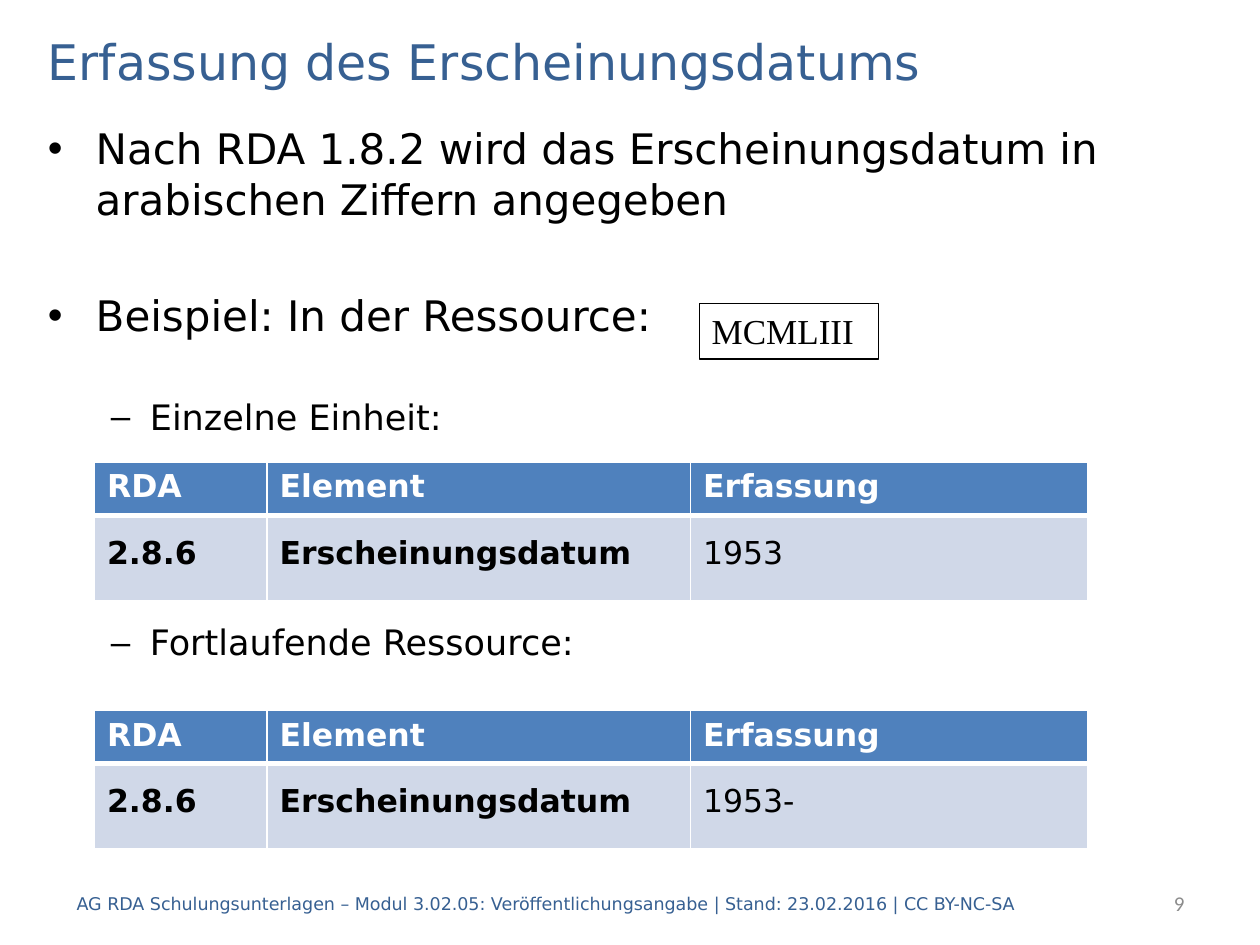
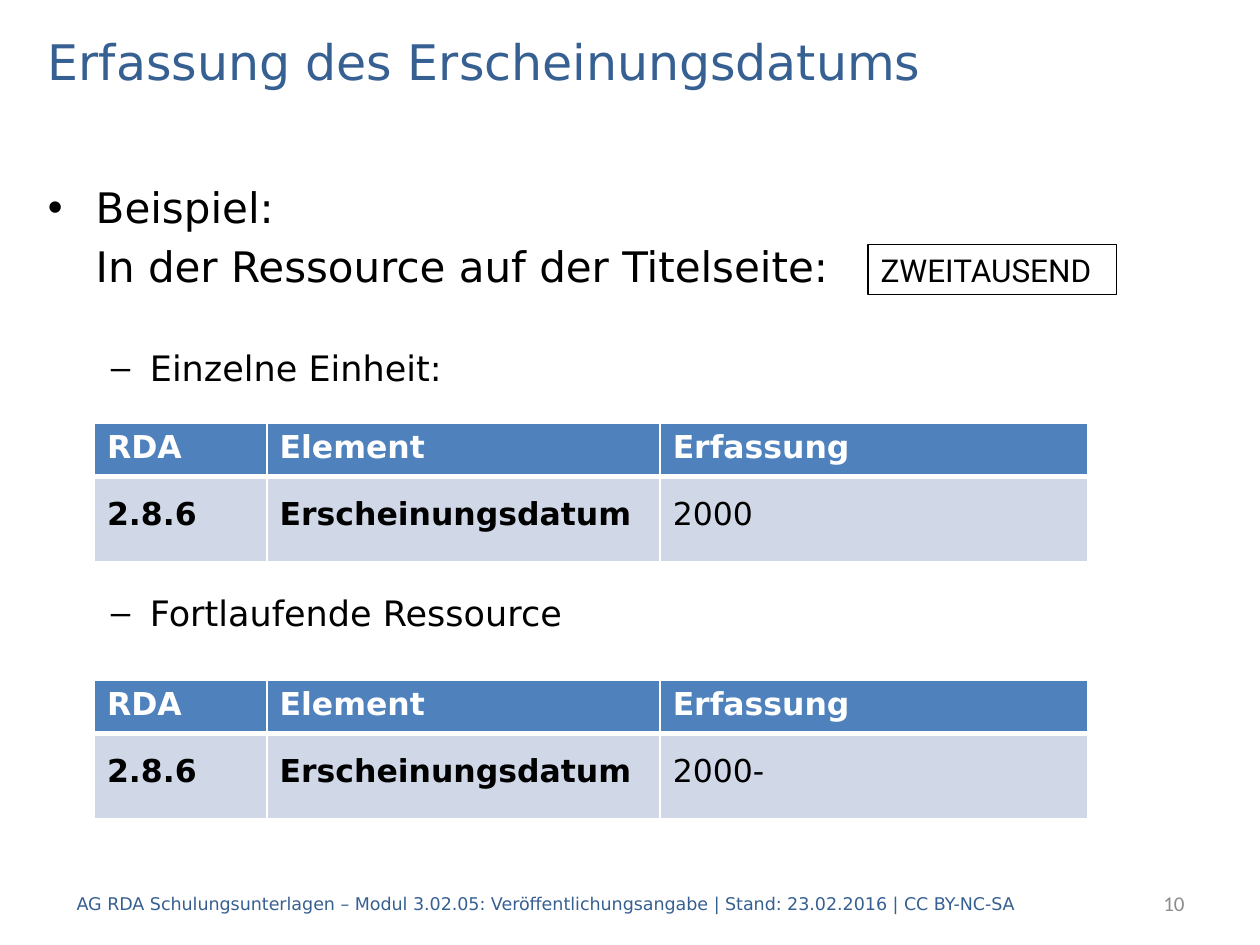
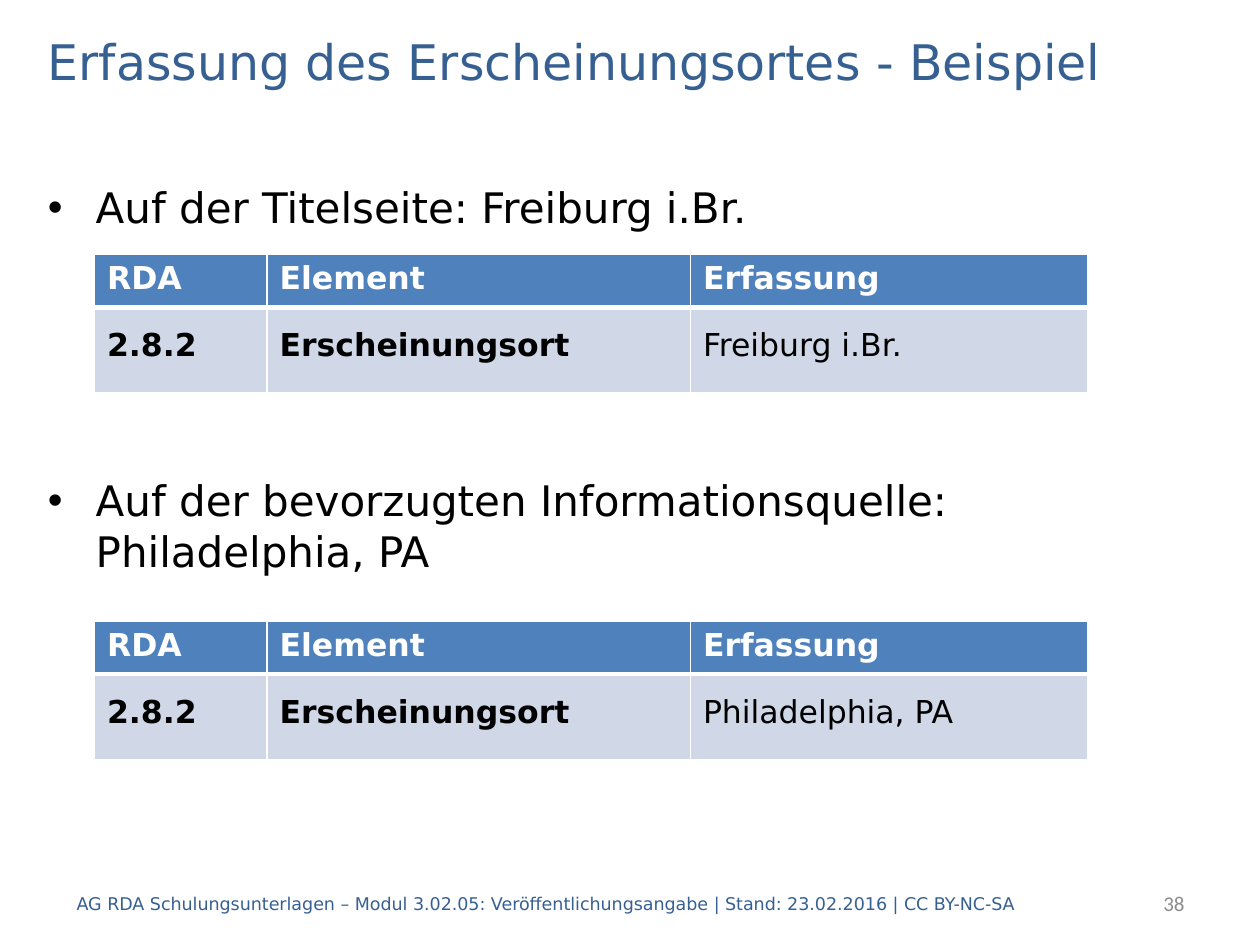
import pptx
import pptx.dml.color
import pptx.enum.shapes
import pptx.enum.text
import pptx.oxml
import pptx.oxml.ns
import pptx.util

Pt = pptx.util.Pt
Inches = pptx.util.Inches
ALIGN = pptx.enum.text.PP_ALIGN
ANCHOR = pptx.enum.text.MSO_ANCHOR
FIT = pptx.enum.text.MSO_AUTO_SIZE
NS = pptx.oxml.ns.nsdecls("a")

SANS = "DejaVu Sans"
FOOTER = ("AG RDA Schulungsunterlagen – Modul 3.02.05: Veröffentlichungsangabe"
          " | Stand: 23.02.2016 | CC BY-NC-SA")
HEADS = ("RDA", "Element", "Erfassung")
WIDE = (5.48, 13.44, 12.6)
NARROW = (5.48, 12.48, 13.56)
LEVELS = {
    "bullet": dict(level=0, char="•", left=0.38, first=-0.38, size=24, line=29),
    "plain": dict(level=0, char=None, left=0.38, first=0, size=24, line=29),
    "dash": dict(level=1, char="–", left=0.81, first=-0.31, size=20, line=24),
}


def rgb(value):
    return pptx.dml.color.RGBColor.from_string(value)


def style_with(obj, values):
    for name, value in values.items():
        setattr(obj, name, value)


class Deck:
    """Slides on a grid of 40 columns and 30 rows with one shared style."""

    title_color, text_color, number_color = "376092", "000000", "8C8C8C"
    head_fill, body_fill, white = "4F81BD", "D0D8E8", "FFFFFF"

    def __init__(self):
        self.prs = pptx.Presentation()
        style_with(self.prs, dict(slide_width=Inches(10), slide_height=Inches(7.5)))
        self.col = self.prs.slide_width / 40
        self.row = self.prs.slide_height / 30

    def area(self, x, y, w, h):
        return (round(x * self.col), round(y * self.row),
                round(w * self.col), round(h * self.row))

    def place(self, sp, *at):
        style_with(sp, dict(zip(("left", "top", "width", "height"), self.area(*at))))

    def frame(self, sp, anchor, fit=FIT.NONE):
        tf = sp.text_frame
        style_with(tf, dict(word_wrap=True, auto_size=fit, vertical_anchor=anchor))
        return tf

    def add_text(self, p, text, size, color, font=SANS, bold=False, **layout):
        style_with(p, {"alignment": ALIGN.LEFT, **layout})
        r = p.add_run()
        r.text = text
        style_with(r.font, dict(size=Pt(size), name=font, bold=bold))
        r.font.color.rgb = rgb(color)

    def slide(self, title, number):
        self.s = self.prs.slides.add_slide(self.prs.slide_layouts[1])
        sp = self.s.shapes.title
        self.place(sp, 1.12, 0.8, 37.8, 2.24)
        p = self.frame(sp, ANCHOR.MIDDLE).paragraphs[0]
        self.add_text(p, title, 28, self.title_color)
        self.label(FOOTER, 2.04, 33.08, 10, self.title_color)
        self.label(number, 31.64, 6.36, 12, self.number_color,
                   font="Calibri", alignment=ALIGN.RIGHT)

    def label(self, text, x, w, size, color, **style):
        sp = self.s.shapes.add_textbox(*self.area(x, 27.88, w, 1.6))
        p = self.frame(sp, ANCHOR.MIDDLE).paragraphs[0]
        self.add_text(p, text, size, color, **style)

    def body(self, items, inset=0.05):
        sp = self.s.placeholders[1]
        self.place(sp, 1.12, 3.68, 37.8, 23.92)
        tf = self.frame(sp, ANCHOR.TOP)
        tf.margin_top = Inches(inset)
        for i, (kind, text, before) in enumerate(items):
            p = tf.add_paragraph() if i else tf.paragraphs[0]
            style = LEVELS[kind]
            self.add_text(p, text, style["size"], self.text_color,
                          level=style["level"], space_before=Pt(before),
                          line_spacing=Pt(style["line"]))
            self.bullet(p, style)

    def bullet(self, p, style):
        pPr = p._p.get_or_add_pPr()
        pPr.set("marL", str(Inches(style["left"])))
        pPr.set("indent", str(Inches(style["first"])))
        tags = [f"<a:buNone {NS}/>"]
        if style["char"]:
            tags = [f'<a:buFont {NS} typeface="Arial"/>',
                    f'<a:buChar {NS} char="{style["char"]}"/>']
        for tag in tags:
            pPr.append(pptx.oxml.parse_xml(tag))

    def table(self, y, values, widths=WIDE):
        heights = (1.68, 2.72)
        at = self.area(3, y, sum(widths), sum(heights))
        tbl = self.s.shapes.add_table(2, len(widths), *at).table
        for column, w in zip(tbl.columns, widths):
            column.width = round(w * self.col)
        for row, h in zip(tbl.rows, heights):
            row.height = round(h * self.row)
        para = dict(line_spacing=Pt(16), space_before=Pt(6), space_after=Pt(6))
        for c, (head, value) in enumerate(zip(HEADS, values)):
            self.cell(tbl.cell(0, c), head, self.head_fill, 3,
                      ANCHOR.TOP, color=self.white, bold=True)
            self.cell(tbl.cell(1, c), value, self.body_fill, 1,
                      ANCHOR.MIDDLE, color=self.text_color, bold=c < 2, **para)

    def cell(self, cell, text, fill, bottom, anchor, **style):
        tcPr = cell._tc.get_or_add_tcPr()
        for side, width in dict(L=1, R=1, T=1, B=bottom).items():
            tcPr.append(pptx.oxml.parse_xml(
                f'<a:ln{side} {NS} w="{Pt(width)}"><a:solidFill>'
                f'<a:srgbClr val="{self.white}"/></a:solidFill></a:ln{side}>'))
        cell.fill.solid()
        cell.fill.fore_color.rgb = rgb(fill)
        cell.vertical_anchor = anchor
        self.add_text(cell.text_frame.paragraphs[0], text, 18, **style)

    def box(self, text, at, size, font):
        sp = self.s.shapes.add_shape(
            pptx.enum.shapes.MSO_SHAPE.RECTANGLE, *self.area(*at))
        sp.shadow.inherit = False
        sp.fill.solid()
        sp.fill.fore_color.rgb = rgb(self.white)
        sp.line.color.rgb = rgb(self.text_color)
        sp.line.width = Pt(0.75)
        p = self.frame(sp, ANCHOR.TOP, FIT.SHAPE_TO_FIT_TEXT).paragraphs[0]
        self.add_text(p, text, size, self.text_color, font)


def main():
    deck = Deck()
    date = ("2.8.6", "Erscheinungsdatum")
    town = ("2.8.2", "Erscheinungsort")

    deck.slide("Erfassung des Erscheinungsdatums", "9")
    deck.body([
        ("bullet", "Nach RDA 1.8.2 wird das Erscheinungsdatum in "
                   "arabischen Ziffern angegeben", 0),
        ("bullet", "Beispiel: In der Ressource:", 37.5),
        ("dash", "Einzelne Einheit:", 31.5),
        ("dash", "Fortlaufende Ressource:", 105),
    ])
    deck.table(14.68, (*date, "1953"))
    deck.table(22.56, (*date, "1953-"))
    deck.box("MCMLIII", (22.2, 9.64, 5.68, 1.76), 20, "Times New Roman")

    deck.slide("Erfassung des Erscheinungsdatums", "10")
    deck.body([
        ("bullet", "Beispiel:", 0),
        ("plain", "In der Ressource auf der Titelseite:", 4.8),
        ("dash", "Einzelne Einheit:", 31.5),
        ("dash", "Fortlaufende Ressource", 116),
    ], inset=0.52)
    deck.table(13.44, (*date, "2000"), NARROW)
    deck.table(21.6, (*date, "2000-"), NARROW)
    deck.box("ZWEITAUSEND", (27.56, 7.76, 7.88, 1.6), 18, "Roboto")

    deck.slide("Erfassung des Erscheinungsortes - Beispiel", "38")
    deck.body([
        ("bullet", "Auf der Titelseite: Freiburg i.Br.", 0),
        ("bullet", "Auf der bevorzugten Informationsquelle: "
                   "Philadelphia, PA", 138.5),
    ], inset=0.52)
    deck.table(8.08, (*town, "Freiburg i.Br."))
    deck.table(19.72, (*town, "Philadelphia, PA"))

    deck.prs.save("out.pptx")


if __name__ == "__main__":
    main()
